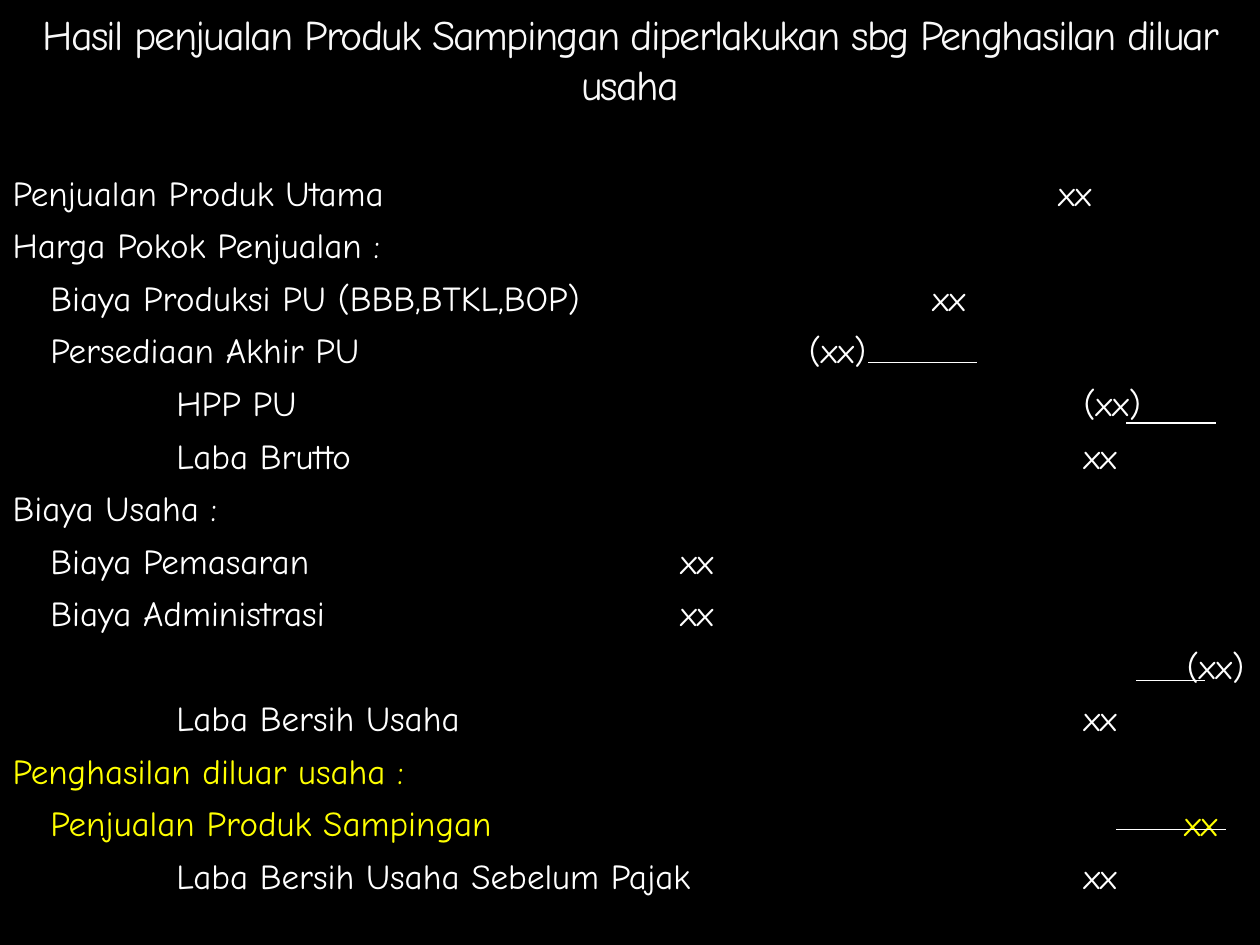
from dataclasses import dataclass
from lxml.etree import SubElement
from pptx import Presentation
from pptx.dml.color import RGBColor
from pptx.enum.shapes import MSO_CONNECTOR
from pptx.enum.text import MSO_ANCHOR, MSO_AUTO_SIZE, PP_ALIGN
from pptx.oxml import parse_xml
from pptx.oxml.ns import qn
from pptx.util import Pt

DRAWING_NAMESPACE = "http://schemas.openxmlformats.org/drawingml/2006/main"


@dataclass(frozen=True)
class Theme:
    font: str = "Comic Neue"
    background: str = "000000"
    title: str = "F9F9F9"
    text: str = "FFFFFF"
    highlight: str = "FFFF00"
    title_size: float = 24
    body_size: float = 20
    row_gap: float = 6
    rule_width: float = 0.75


THEME = Theme()
FIRST_INDENT = 21.6
COLUMN_STEP = 72


def column_position(step):
    return FIRST_INDENT + COLUMN_STEP * step


LABEL_INDENTS = [0, column_position(0), column_position(1)]
MARKETING, PRODUCTION, SALES, TOTAL = map(column_position, (5, 7, 8, 9))
INVENTORY_DEDUCTION, TOTAL_DEDUCTION = 455, 671

TITLE = "Hasil penjualan Produk Sampingan diperlakukan sbg Penghasilan diluar usaha"
STATEMENT_ROWS = [
    (0, "Penjualan Produk Utama", SALES, "xx", THEME.text),
    (0, "Harga Pokok Penjualan :", None, "", THEME.text),
    (1, "Biaya Produksi PU (BBB,BTKL,BOP)", PRODUCTION, "xx", THEME.text),
    (1, "Persediaan Akhir PU", INVENTORY_DEDUCTION, "(xx)", THEME.text),
    (2, "HPP PU", TOTAL_DEDUCTION, "(xx)", THEME.text),
    (2, "Laba Brutto", TOTAL, "xx", THEME.text),
    (0, "Biaya Usaha :", None, "", THEME.text),
    (1, "Biaya Pemasaran", MARKETING, "xx", THEME.text),
    (1, "Biaya Administrasi", MARKETING, "xx", THEME.text),
    (0, "", TOTAL_DEDUCTION, "(xx)", THEME.text),
    (2, "Laba Bersih Usaha", TOTAL, "xx", THEME.text),
    (0, "Penghasilan diluar usaha :", None, "", THEME.highlight),
    (1, "Penjualan Produk Sampingan", TOTAL, "xx", THEME.highlight),
    (2, "Laba Bersih Usaha Sebelum Pajak", TOTAL, "xx", THEME.text),
]
SUM_RULES = [
    (496.1, 558.5, 207.2),
    (643.7, 694.6, 241.7),
    (649.4, 688.8, 389),
    (637.9, 700.4, 474.2),
]


def write_text(paragraph, text, *, size, color, align=PP_ALIGN.LEFT, space_before=0):
    paragraph.alignment = align
    paragraph.space_before = Pt(space_before)
    run = paragraph.add_run()
    run.text = text
    run.font.name = THEME.font
    run.font.size = Pt(size)
    run.font.color.rgb = RGBColor.from_string(color)
    return run


def set_columns(paragraph, indent, amount_column):
    properties = paragraph._p.get_or_add_pPr()
    properties.set("marL", str(int(Pt(indent))))
    properties.set("indent", "0")
    if amount_column is not None:
        properties.set("defTabSz", str(int(Pt(amount_column - indent))))
    SubElement(properties, qn("a:buNone"))


def style_title_run(run):
    properties = run._r.get_or_add_rPr()
    properties.set("spc", "-100")
    properties.insert(0, parse_xml(
        f'<a:ln xmlns:a="{DRAWING_NAMESPACE}" w="{int(Pt(0.25))}"><a:solidFill>'
        '<a:srgbClr val="3C4422"><a:alpha val="25000"/></a:srgbClr>'
        '</a:solidFill><a:prstDash val="solid"/></a:ln>'
    ))


class SlideBuilder:
    def __init__(self, presentation, theme):
        self.theme = theme
        self.slide = presentation.slides.add_slide(presentation.slide_layouts[1])
        fill = self.slide.background.fill
        fill.solid()
        fill.fore_color.rgb = RGBColor.from_string(theme.background)

    def place(self, shape, top, height, anchor):
        shape.left, shape.top = Pt(0), Pt(top)
        shape.width, shape.height = Pt(720), Pt(height)
        frame = shape.text_frame
        frame.word_wrap = True
        frame.auto_size = MSO_AUTO_SIZE.NONE
        frame.vertical_anchor = anchor
        return frame

    def title(self, text):
        frame = self.place(self.slide.shapes.title, 0, 66, MSO_ANCHOR.BOTTOM)
        run = write_text(frame.paragraphs[0], text, size=self.theme.title_size,
                         color=self.theme.title, align=PP_ALIGN.CENTER)
        style_title_run(run)

    def statement(self, rows):
        frame = self.place(self.slide.placeholders[1], 94.3, 425.5, MSO_ANCHOR.TOP)
        for index, (level, label, column, amount, color) in enumerate(rows):
            paragraph = frame.add_paragraph() if index else frame.paragraphs[0]
            text = label if column is None else f"{label}\t{amount}"
            write_text(paragraph, text, size=self.theme.body_size, color=color,
                       space_before=self.theme.row_gap)
            set_columns(paragraph, LABEL_INDENTS[level], column)

    def rule(self, left, right, top):
        connector = self.slide.shapes.add_connector(
            MSO_CONNECTOR.STRAIGHT, Pt(left), Pt(top), Pt(right), Pt(top))
        connector.line.color.rgb = RGBColor.from_string(self.theme.text)
        connector.line.width = Pt(self.theme.rule_width)
        SubElement(connector._element.spPr, qn("a:effectLst"))


def main():
    presentation = Presentation()
    presentation.slide_width, presentation.slide_height = Pt(720), Pt(540)
    builder = SlideBuilder(presentation, THEME)
    builder.title(TITLE)
    builder.statement(STATEMENT_ROWS)
    for left, right, top in SUM_RULES:
        builder.rule(left, right, top)
    presentation.save("out.pptx")


if __name__ == "__main__":
    main()
